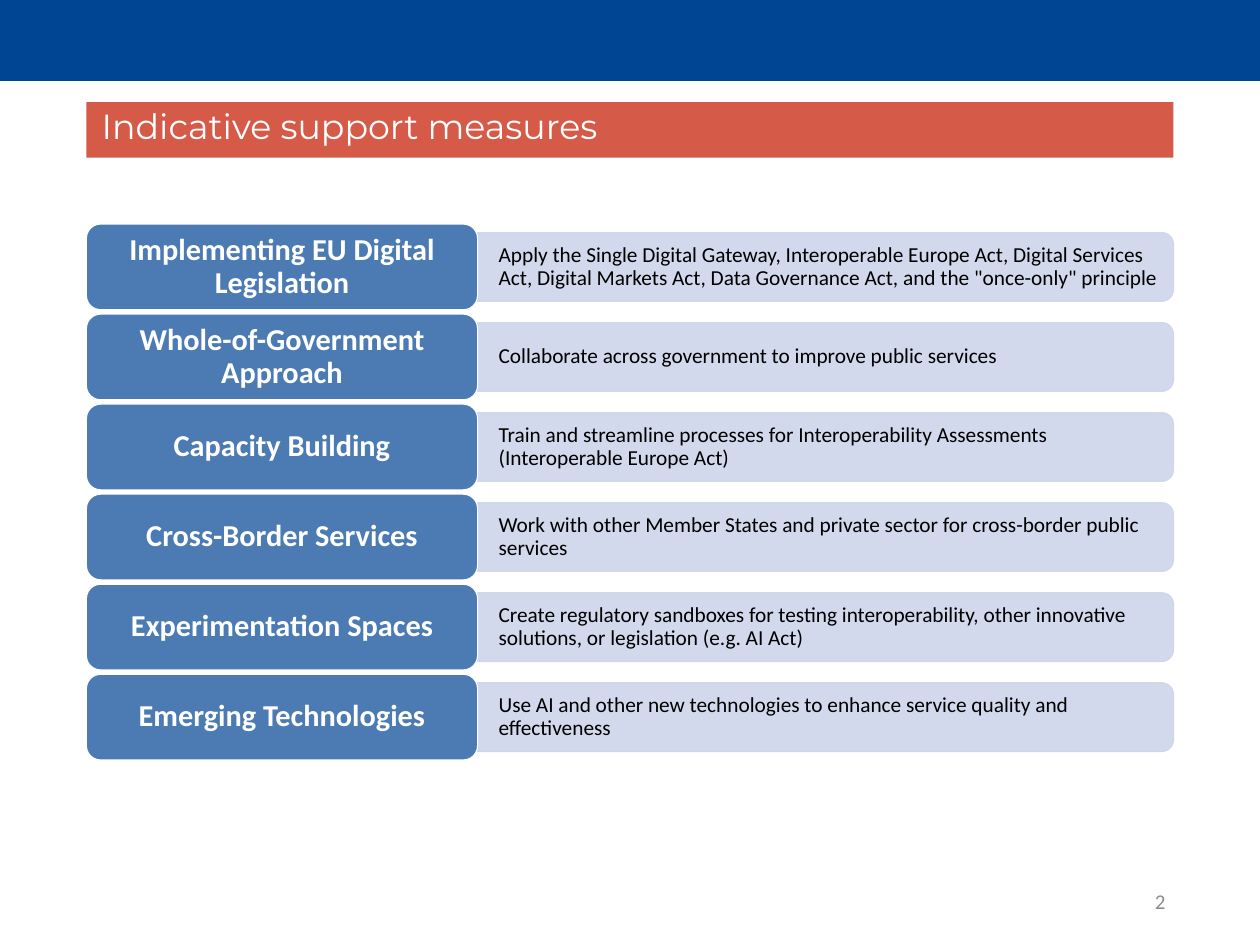
from lxml.etree import SubElement
from pptx import Presentation
from pptx.dml.color import RGBColor
from pptx.enum.shapes import MSO_SHAPE
from pptx.enum.text import MSO_ANCHOR, MSO_AUTO_SIZE, PP_ALIGN
from pptx.oxml.ns import qn
from pptx.util import Pt

TITLE = "Indicative support measures"
PAGE = "2"
MEASURES = [
    ("Implementing EU Digital Legislation",
     "Apply the Single Digital Gateway, Interoperable Europe Act, Digital Services Act, "
     "Digital Markets Act, Data Governance Act, and the \"once-only\" principle"),
    ("Whole-of-Government Approach",
     "Collaborate across government to improve public services"),
    ("Capacity Building",
     "Train and streamline processes for Interoperability Assessments (Interoperable Europe Act)"),
    ("Cross-Border Services",
     "Work with other Member States and private sector for cross-border public services"),
    ("Experimentation Spaces",
     "Create regulatory sandboxes for testing interoperability, other innovative solutions, "
     "or legislation (e.g. AI Act)"),
    ("Emerging Technologies",
     "Use AI and other new technologies to enhance service quality and effectiveness"),
]
COLORS = {"blue": "004494", "red": "D55A48", "lavender": "CFD5EA",
          "white": "FFFFFF", "black": "000000", "gray": "8C8C8C"}

SLIDE_W, SLIDE_H = 1122.5, 841.7
LEFT, RIGHT = 77, 1045.4
LABEL_W, LABEL_H = 348.5, 76.3
BAR_H = 61.2
FIRST_TOP, PITCH = 199.6, 80.2


def color(name):
    return RGBColor.from_string(COLORS[name])


def set_alpha(paint, percent):
    srgb = paint._xPr.find(".//" + qn("a:srgbClr"))
    SubElement(srgb, qn("a:alpha"), val=str(percent * 1000))


def paint_shape(shape, fill, line=None, opacity=100, line_opacity=100):
    shape.shadow.inherit = False
    shape.fill.solid()
    shape.fill.fore_color.rgb = color(fill)
    if opacity < 100:
        set_alpha(shape.fill, opacity)
    if line is None:
        shape.line.fill.background()
        return
    shape.line.width = Pt(1)
    shape.line.color.rgb = color(line)
    if line_opacity < 100:
        set_alpha(shape.line.fill, line_opacity)


def write(shape, text, size, ink, align=PP_ALIGN.LEFT, font="Calibri", bold=False,
          spacing=0.9, insets=(6, 3, 6, 3)):
    frame = shape.text_frame
    frame.text = text
    frame.word_wrap = True
    frame.auto_size = MSO_AUTO_SIZE.NONE
    frame.vertical_anchor = MSO_ANCHOR.MIDDLE
    (frame.margin_left, frame.margin_top,
     frame.margin_right, frame.margin_bottom) = map(Pt, insets)
    paragraph = frame.paragraphs[0]
    paragraph.alignment = align
    paragraph.line_spacing = spacing
    run_font = paragraph.runs[0].font
    run_font.name, run_font.size, run_font.bold = font, Pt(size), bold
    run_font.color.rgb = color(ink)


def add_measure(shapes, index, label_text, detail_text):
    top = FIRST_TOP + index * PITCH
    middle = top + LABEL_H / 2
    bar_left = LEFT + LABEL_W
    bar_w = RIGHT - bar_left

    bar = shapes.add_shape(MSO_SHAPE.ROUND_2_SAME_RECTANGLE,
                           Pt(bar_left + (bar_w - BAR_H) / 2), Pt(middle - bar_w / 2),
                           Pt(BAR_H), Pt(bar_w))
    bar.rotation = 90
    paint_shape(bar, "lavender", "lavender", 90, 90)

    detail = shapes.add_textbox(Pt(bar_left), Pt(middle - BAR_H / 2), Pt(bar_w - 3), Pt(BAR_H))
    write(detail, detail_text, 19, "black", insets=(18.7, 3, 6, 3))

    label = shapes.add_shape(MSO_SHAPE.ROUNDED_RECTANGLE,
                             Pt(LEFT), Pt(top), Pt(LABEL_W), Pt(LABEL_H))
    paint_shape(label, "blue", "white", 70)
    write(label, label_text, 27, "white", PP_ALIGN.CENTER, bold=True, insets=(8, 4, 8, 4))


def main():
    prs = Presentation()
    prs.slide_width, prs.slide_height = Pt(SLIDE_W), Pt(SLIDE_H)
    slide = prs.slides.add_slide(prs.slide_layouts[5])
    shapes = slide.shapes

    banner = shapes.add_shape(MSO_SHAPE.RECTANGLE, 0, 0, Pt(SLIDE_W), Pt(72))
    paint_shape(banner, "blue")

    title = shapes.title
    title.left, title.top = Pt(LEFT), Pt(90.9)
    title.width, title.height = Pt(RIGHT - LEFT), Pt(49.5)
    title.fill.solid()
    title.fill.fore_color.rgb = color("red")
    write(title, TITLE, 31, "white", font="Montserrat", spacing=0.8,
          insets=(13.5, 6.7, 13.5, 6.7))

    for index, (label_text, detail_text) in enumerate(MEASURES):
        add_measure(shapes, index, label_text, detail_text)

    page_number = shapes.add_textbox(Pt(RIGHT - 252.6), Pt(780.2), Pt(252.6), Pt(44.8))
    write(page_number, PAGE, 18.7, "gray", PP_ALIGN.RIGHT, spacing=1.0,
          insets=(7.2, 3.6, 7.2, 3.6))

    prs.save("out.pptx")


if __name__ == "__main__":
    main()
